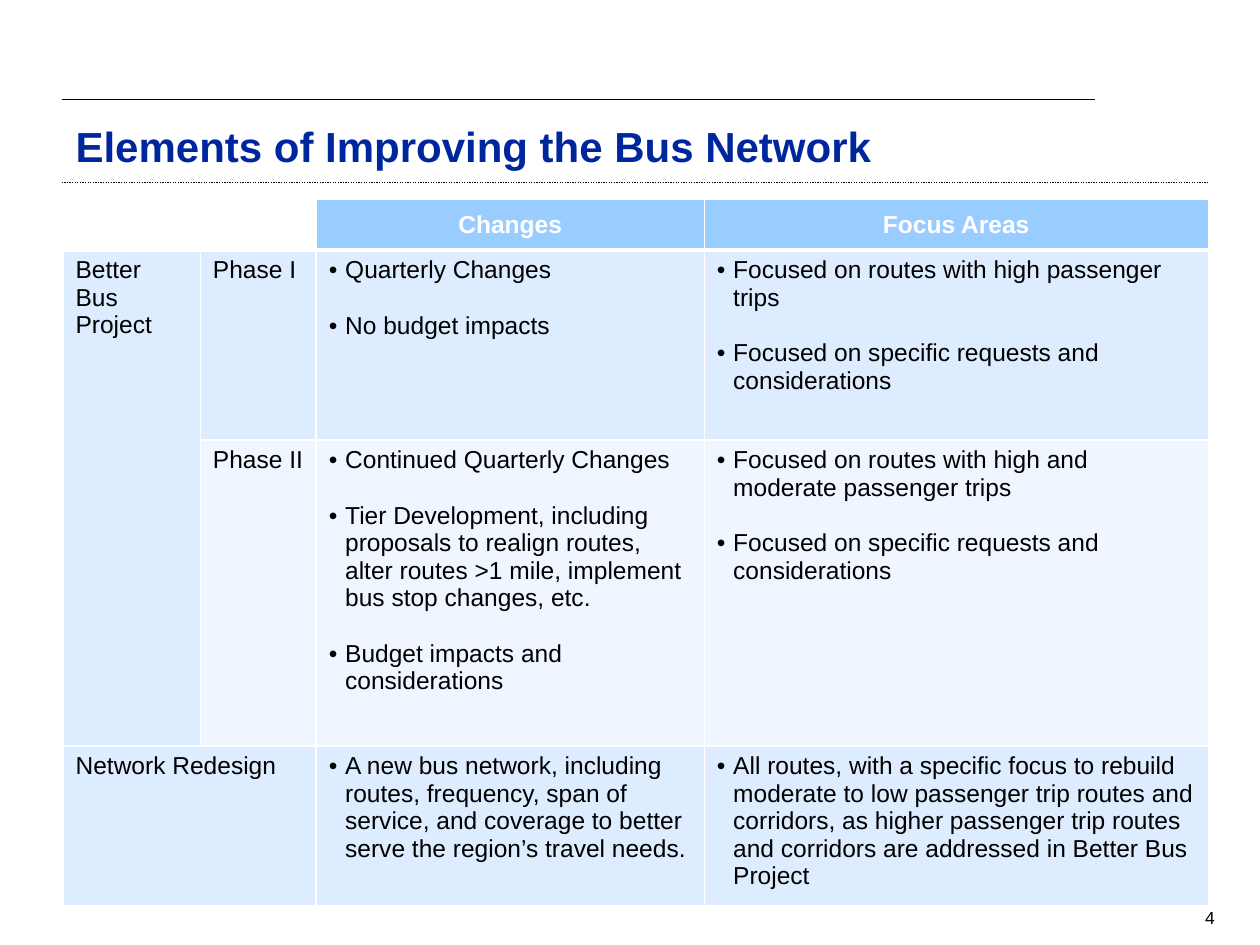
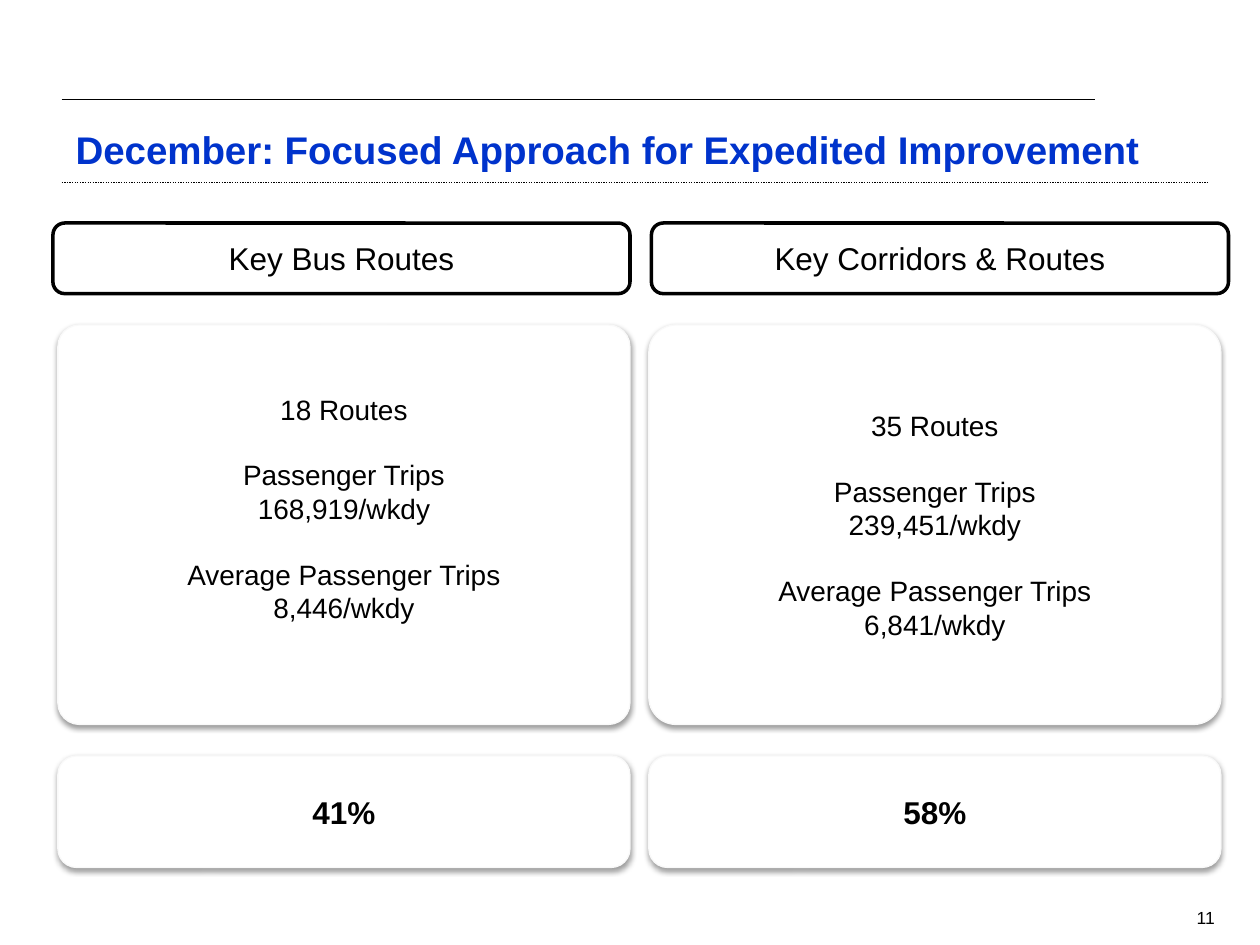
from lxml.etree import SubElement
from pptx import Presentation
from pptx.dml.color import RGBColor
from pptx.enum.dml import MSO_LINE
from pptx.enum.shapes import MSO_CONNECTOR, MSO_SHAPE
from pptx.enum.text import MSO_ANCHOR as Anchor, MSO_AUTO_SIZE as AutoSize, PP_ALIGN as Align
from pptx.oxml import parse_xml
from pptx.oxml.ns import nsdecls, qn
from pptx.util import Inches, Pt

BLACK, WHITE, HEADER_BLUE = "000000", "FFFFFF", "99CCFF"
PALE_BLUE, PALEST_BLUE, CARD_EDGE = "DEECFF", "EFF6FF", "F9F9F9"
colour = RGBColor.from_string

presentation = Presentation()
presentation.slide_width = Inches(10)
presentation.slide_height = Inches(7.5)


def percent(*lengths):
    sides = (presentation.slide_width, presentation.slide_height) * 2
    return [round(side * length / 100) for side, length in zip(sides, lengths)]


def write_text(frame, groups, size, tint=BLACK, bold=False, align=Align.LEFT, gap=0, bullet=False):
    frame.word_wrap = True
    lines = [(line, group > 0 and index == 0)
             for group, group_lines in enumerate(groups)
             for index, line in enumerate(group_lines)]
    for position, (line, starts_group) in enumerate(lines):
        paragraph = frame.paragraphs[0] if position == 0 else frame.add_paragraph()
        if bullet:
            properties = paragraph._p.get_or_add_pPr()
            properties.set("marL", str(Inches(0.13)))
            properties.set("indent", str(-Inches(0.13)))
            SubElement(properties, qn("a:buFont"), typeface="Arial")
            SubElement(properties, qn("a:buChar"), char="•")
        paragraph.alignment = align
        if starts_group:
            paragraph.space_before = Pt(gap)
        run = paragraph.add_run()
        run.text = line
        for name, value in {"name": "Arial", "size": Pt(size), "bold": bold}.items():
            setattr(run.font, name, value)
        run.font.color.rgb = colour(tint)


pages = [
    ("Elements of Improving the Bus Network", 24, "00269E", Anchor.TOP, "4"),
    ("December: Focused Approach for Expedited Improvement", 22, "0033CC", Anchor.BOTTOM, "11"),
]
rules = [(86.9, 10.53, 1, MSO_LINE.SOLID), (95.9, 19.33, 0.75, MSO_LINE.ROUND_DOT)]
slides = []
for title_text, title_size, title_colour, title_anchor, page_number in pages:
    slide = presentation.slides.add_slide(presentation.slide_layouts[5])
    slides.append(slide)
    for right, height, weight, dash in rules:
        rule = slide.shapes.add_connector(MSO_CONNECTOR.STRAIGHT, *percent(4.9, height, right, height))
        rule.line.color.rgb = colour(BLACK)
        rule.line.width = Pt(weight)
        rule.line.dash_style = dash
        SubElement(rule._element.spPr, qn("a:effectLst"))
    title = slide.shapes.title
    title.left, title.top, title.width, title.height = percent(5, 12.13, 92.4, 6.75)
    title.text_frame.auto_size = AutoSize.NONE
    title.text_frame.vertical_anchor = title_anchor
    write_text(title.text_frame, [[title_text]], title_size, title_colour, True)
    number = slide.shapes.add_textbox(*percent(89.1, 95.47, 8.3, 3.33))
    number.text_frame.vertical_anchor = Anchor.MIDDLE
    write_text(number.text_frame, [[page_number]], 10, align=Align.RIGHT)

elements_slide, december_slide = slides

table_rows = [
    [[], [], ["Changes"], ["Focus Areas"]],
    [["Better Bus Project"], ["Phase I"],
     ["Quarterly Changes", "No budget impacts"],
     ["Focused on routes with high passenger trips",
      "Focused on specific requests and considerations"]],
    [[], ["Phase II"],
     ["Continued Quarterly Changes",
      "Tier Development, including proposals to realign routes, alter routes >1 mile, "
      "implement bus stop changes, etc.",
      "Budget impacts and considerations"],
     ["Focused on routes with high and moderate passenger trips",
      "Focused on specific requests and considerations"]],
    [["Network Redesign"], [],
     ["A new bus network, including routes, frequency, span of service, and coverage "
      "to better serve the region’s travel needs."],
     ["All routes, with a specific focus to rebuild moderate to low passenger trip routes "
      "and corridors, as higher passenger trip routes and corridors are addressed in "
      "Better Bus Project"]],
]
table = elements_slide.shapes.add_table(4, 4, *percent(5, 21.07, 90.9, 74.8)).table
for column, share in zip(table.columns, [10.9, 9.2, 30.8, 40]):
    column.width = percent(share)[0]
for row, share in zip(table.rows, [5.4, 20.1, 32.4, 16.9]):
    row.height = percent(0, share)[1]
table.cell(1, 0).merge(table.cell(2, 0))
table.cell(3, 0).merge(table.cell(3, 1))

row_fills = [HEADER_BLUE, PALE_BLUE, PALEST_BLUE, PALE_BLUE]
for row_index, row_texts in enumerate(table_rows):
    for column_index, texts in enumerate(row_texts):
        cell = table.cell(row_index, column_index)
        is_header = row_index == 0
        cell_properties = cell._tc.get_or_add_tcPr()
        for side in ("L", "R", "T", "B"):
            under_header = (row_index, side) in [(0, "B"), (1, "T")]
            border = SubElement(cell_properties, qn(f"a:ln{side}"), w=str(Pt(3 if under_header else 1)))
            SubElement(SubElement(border, qn("a:solidFill")), qn("a:srgbClr"), val=WHITE)
        cell.fill.solid()
        fill = row_fills[row_index]
        if column_index < 2 and is_header:
            fill = WHITE
        elif column_index == 0:
            fill = PALE_BLUE
        cell.fill.fore_color.rgb = colour(fill)
        cell.vertical_anchor = Anchor.MIDDLE if is_header else Anchor.TOP
        if texts:
            write_text(cell.text_frame, [[text] for text in texts], 14,
                       WHITE if is_header else BLACK, is_header,
                       Align.CENTER if is_header else Align.LEFT,
                       gap=16, bullet=column_index > 1 and not is_header)

route_groups = [
    ("Key Bus Routes", "18 Routes", "168,919/wkdy", "8,446/wkdy", "41%", 4.2, 4.6, 0.054, 0.31),
    ("Key Corridors & Routes", "35 Routes", "239,451/wkdy", "6,841/wkdy", "58%", 51.7, 51.5, 0.068, 0.05),
]
for heading, routes, trips, average, share, heading_left, card_left, rounding, bottom_inset in route_groups:
    details = [[routes], ["Passenger Trips", trips], ["Average Passenger Trips", average]]
    cards = [
        (heading_left, 23.6, 45.8, 7.47, 0.167, [[heading]], 18, False, BLACK, 2, 0.05),
        (card_left, 34.4, 45.4, 42.27, rounding, details, 16, False, CARD_EDGE, 0.75, bottom_inset),
        (card_left, 80, 45.4, 11.8, 0.167, [[share]], 18, True, CARD_EDGE, 0.75, 0.05),
    ]
    for left, top, width, height, corner, groups, size, bold, edge, weight, inset in cards:
        card = december_slide.shapes.add_shape(
            MSO_SHAPE.ROUNDED_RECTANGLE, *percent(left, top, width, height))
        card.adjustments[0] = corner
        card.fill.solid()
        card.fill.fore_color.rgb = colour(WHITE)
        card.line.color.rgb = colour(edge)
        card.line.width = Pt(weight)
        card.shadow.inherit = False
        if edge == CARD_EDGE:
            card._element.spPr.find(qn("a:effectLst")).append(parse_xml(
                f'<a:outerShdw {nsdecls("a")} blurRad="{Pt(3.1)}" dist="{Pt(1.6)}" dir="5400000" '
                f'rotWithShape="0"><a:srgbClr val="{BLACK}"><a:alpha val="38000"/></a:srgbClr></a:outerShdw>'))
        card.text_frame.vertical_anchor = Anchor.MIDDLE
        card.text_frame.margin_bottom = Inches(inset)
        write_text(card.text_frame, groups, size, bold=bold, align=Align.CENTER, gap=18.4)

presentation.save("out.pptx")
